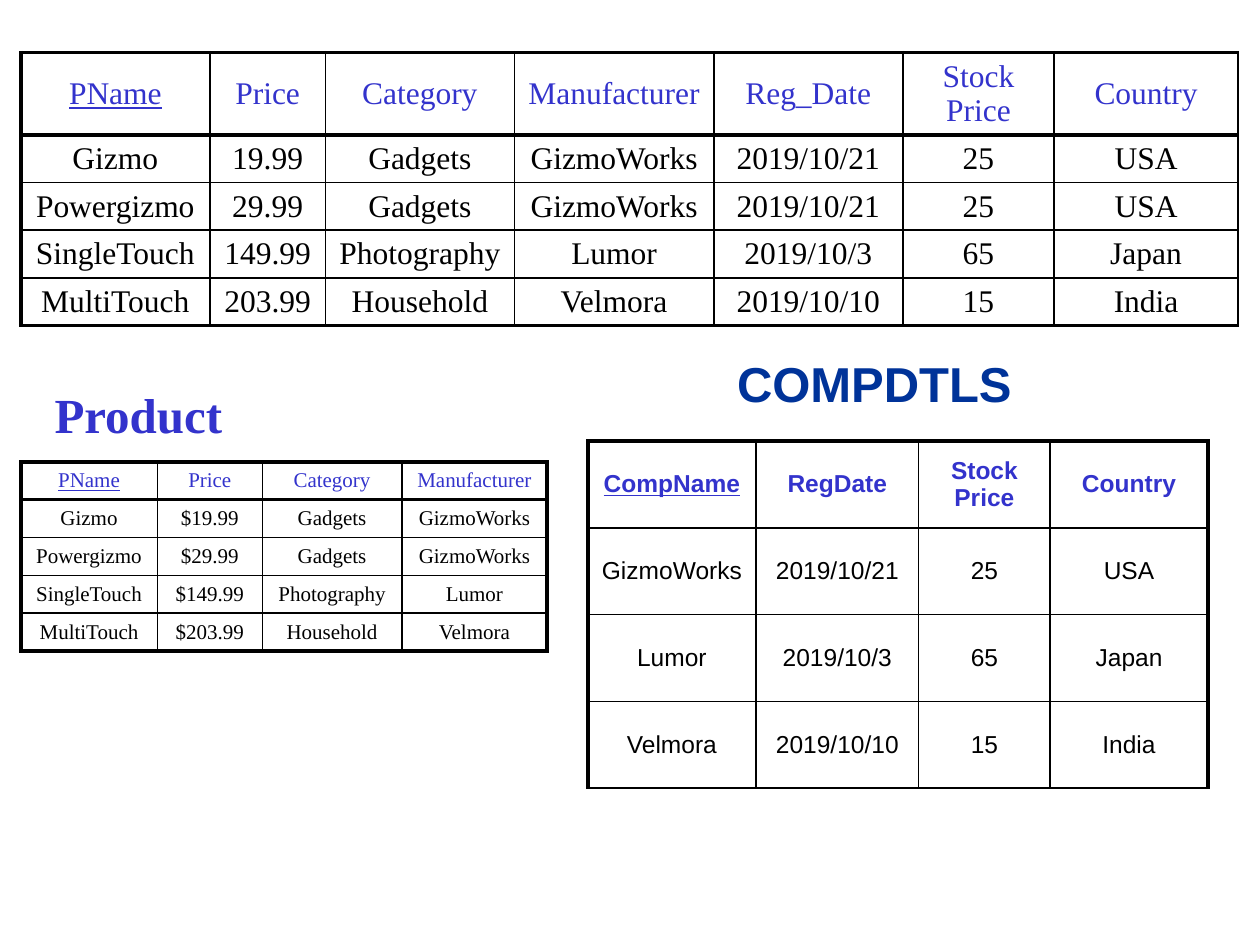
import pptx
import pptx.dml.color
import pptx.enum.text
import pptx.util
import lxml.etree
from pptx.oxml.ns import qn
from pptx.util import Cm

COLORS = {"header": "3333CC", "body": "000000", "border": "000000", "company": "003399"}
SERIF, SANS = "Times New Roman", "Arial"
THIN, THICK = 1, 2.25

PRODUCTS = [
    ("Gizmo", "19.99", "Gadgets", "GizmoWorks"),
    ("Powergizmo", "29.99", "Gadgets", "GizmoWorks"),
    ("SingleTouch", "149.99", "Photography", "Lumor"),
    ("MultiTouch", "203.99", "Household", "Velmora"),
]
COMPANIES = {
    "GizmoWorks": ("2019/10/21", "25", "USA"),
    "Lumor": ("2019/10/3", "65", "Japan"),
    "Velmora": ("2019/10/10", "15", "India"),
}
PRODUCT_HEADER = ("PName", "Price", "Category", "Manufacturer")


def write(paragraph, text, color, **font):
    run = paragraph.add_run()
    run.text = text
    run.font.color.rgb = pptx.dml.color.RGBColor.from_string(COLORS[color])
    for name, value in font.items():
        setattr(run.font, name, value)


def set_borders(cell, widths):
    """Draw the left, right, top and bottom borders with widths in points."""
    properties = cell._tc.get_or_add_tcPr()
    for side, width in zip("LRTB", widths):
        line = lxml.etree.SubElement(properties, qn(f"a:ln{side}"), w=str(pptx.util.Pt(width)))
        fill = lxml.etree.SubElement(line, qn("a:solidFill"))
        lxml.etree.SubElement(fill, qn("a:srgbClr"), val=COLORS["border"])


def add_grid(slide, left, top, widths, heights, rows, size, font,
             bold_header=False, right=THICK, bottom=THICK, under_header=THICK):
    """Add a table whose first column header is the underlined key."""
    last_row, last_column = len(rows) - 1, len(widths) - 1
    frame = slide.shapes.add_table(len(rows), len(widths), Cm(left), Cm(top),
                                   Cm(sum(widths)), Cm(sum(heights)))
    table = frame.table
    table.first_row = table.horz_banding = False
    for column, width in zip(table.columns, widths):
        column.width = Cm(width)
    for row, height in zip(table.rows, heights):
        row.height = Cm(height)

    horizontal = [THICK, under_header] + [THIN] * (last_row - 1) + [bottom]
    vertical = [THICK] + [THIN] * last_column + [right]
    for i, row in enumerate(rows):
        for j, text in enumerate(row):
            cell = table.cell(i, j)
            set_borders(cell, (*vertical[j:j + 2], *horizontal[i:i + 2]))
            cell.fill.background()
            cell.vertical_anchor = pptx.enum.text.MSO_ANCHOR.MIDDLE
            paragraph = cell.text_frame.paragraphs[0]
            paragraph.alignment = pptx.enum.text.PP_ALIGN.CENTER
            write(paragraph, text, "body" if i else "header", size=pptx.util.Pt(size),
                  name=font, bold=bold_header and i == 0, underline=i == j == 0)


def add_label(slide, text, left, top, width, font, color):
    shape = slide.shapes.add_textbox(Cm(left), Cm(top), Cm(width), Cm(1.44))
    shape.text_frame.word_wrap = False
    shape.text_frame.auto_size = pptx.enum.text.MSO_AUTO_SIZE.SHAPE_TO_FIT_TEXT
    write(shape.text_frame.paragraphs[0], text, color,
          size=pptx.util.Pt(28), name=font, bold=True)


def main():
    presentation = pptx.Presentation()
    presentation.slide_width, presentation.slide_height = Cm(25.4), Cm(19.05)
    slide = presentation.slides.add_slide(presentation.slide_layouts[6])

    joined = [PRODUCT_HEADER + ("Reg_Date", "Stock Price", "Country")]
    joined += [product + COMPANIES[product[-1]] for product in PRODUCTS]
    add_grid(slide, 0.42, 1.06, [3.81, 2.33, 3.81, 4.02, 3.81, 3.05, 3.71],
             [1.66] + [0.96] * 4, joined, 18, SERIF, right=THIN)

    add_label(slide, "Product", 0.85, 7.62, 3.93, SERIF, "header")
    companies = [("CompName", "RegDate", "Stock Price", "Country")]
    companies += [(name, *details) for name, details in COMPANIES.items()]
    add_grid(slide, 11.85, 8.89, [3.39, 3.28, 2.65, 3.18], [1.75] * 4, companies,
             14, SANS, bold_header=True, bottom=THIN, under_header=THIN)

    add_label(slide, "COMPDTLS", 14.61, 7, 6.12, SANS, "company")
    products = [PRODUCT_HEADER]
    products += [(name, f"${price}", *rest) for name, price, *rest in PRODUCTS]
    add_grid(slide, 0.42, 9.31, [2.75, 2.12, 2.81, 2.93], [0.76] * 5, products, 12, SERIF)

    presentation.save("out.pptx")


if __name__ == "__main__":
    main()
